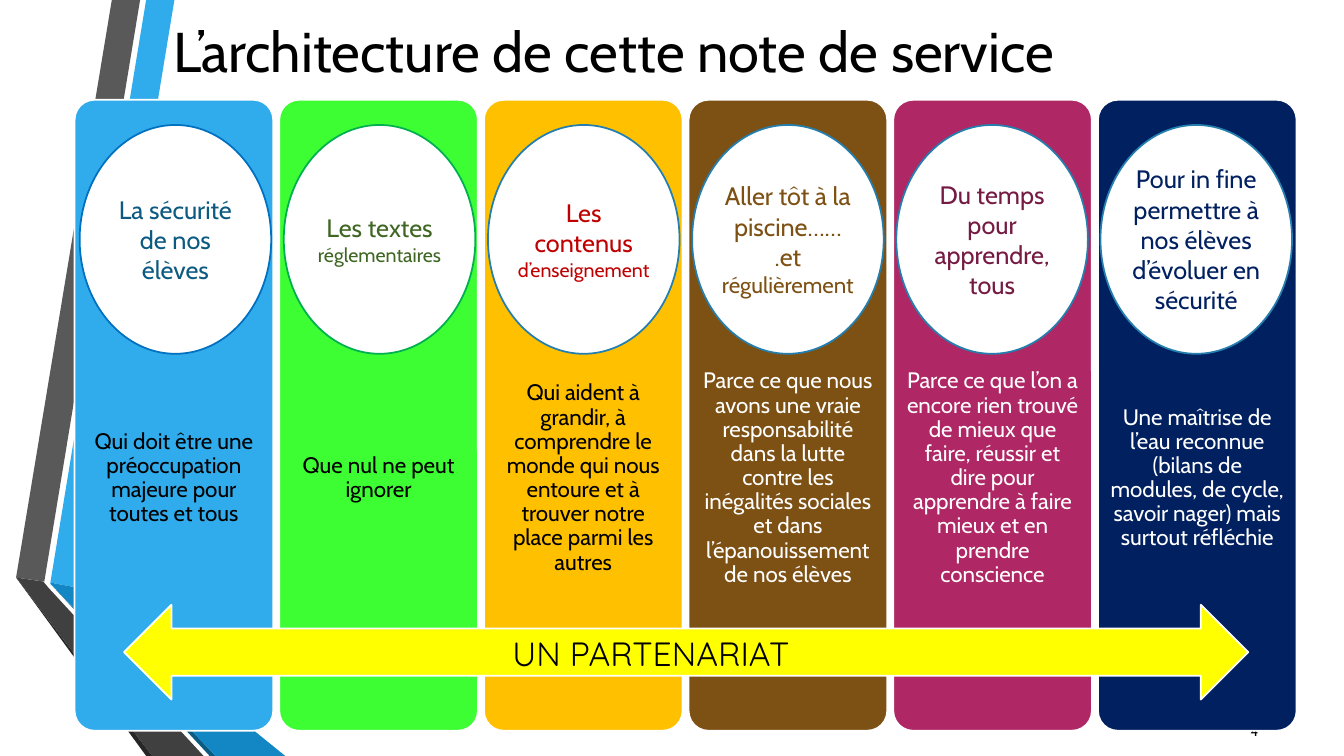
from pptx import Presentation
from pptx.dml.color import RGBColor
from pptx.enum.shapes import MSO_SHAPE
from pptx.enum.text import MSO_ANCHOR, PP_ALIGN
from pptx.util import Inches, Pt

ROUNDED = MSO_SHAPE.ROUNDED_RECTANGLE
OVAL = MSO_SHAPE.OVAL
DOUBLE_ARROW = MSO_SHAPE.LEFT_RIGHT_ARROW
TOP, MIDDLE = MSO_ANCHOR.TOP, MSO_ANCHOR.MIDDLE
LEFT, CENTER, RIGHT = PP_ALIGN.LEFT, PP_ALIGN.CENTER, PP_ALIGN.RIGHT

BLACK = RGBColor(0x00, 0x00, 0x00)
WHITE = RGBColor(0xFF, 0xFF, 0xFF)
SKY = RGBColor(0x30, 0xAC, 0xEC)
GREY = RGBColor(0x59, 0x59, 0x59)
DARK_GREY = RGBColor(0x40, 0x40, 0x40)
CHARCOAL = RGBColor(0x26, 0x26, 0x26)
BLUE = RGBColor(0x12, 0x87, 0xC3)
DEEP_BLUE = RGBColor(0x0C, 0x5A, 0x82)
LIME = RGBColor(0x3D, 0xFD, 0x33)
AMBER = RGBColor(0xFF, 0xC0, 0x00)
BROWN = RGBColor(0x7D, 0x50, 0x13)
MAGENTA = RGBColor(0xAF, 0x27, 0x64)
NAVY = RGBColor(0x00, 0x20, 0x60)
YELLOW = RGBColor(0xFF, 0xFF, 0x00)
MOSS = RGBColor(0x3F, 0x66, 0x23)
RED = RGBColor(0xC0, 0x00, 0x00)
PLUM = RGBColor(0x75, 0x1A, 0x43)
BLUE_RING = RGBColor(0x00, 0x70, 0xC0)
GREEN_RING = RGBColor(0x00, 0xB0, 0x50)
TEAL_RING = RGBColor(0x24, 0x7F, 0xAF)

FONT = "Cabin"
COLUMN_LEFT, COLUMN_PITCH, COLUMN_WIDTH = 0.74, 2.03, 1.97
OVAL_LEFT, OVAL_PITCH = 0.79, 2.025

RIBBONS = [
    (SKY, [(0.5, 5.78), (0.77, 5.83), (1.73, 0), (1.45, 0)]),
    (GREY, [(1.39, 0), (1.11, 0), (0.16, 5.73), (0.44, 5.77)]),
    (CHARCOAL, [(0.16, 5.73), (1.45, 7.5), (1.51, 7.5)]),
    (DEEP_BLUE, [(0.5, 5.79), (2.08, 7.5), (2.14, 7.5)]),
    (BLUE, [(0.5, 5.79), (2.14, 7.5), (2.83, 7.5), (0.77, 5.83), (0.5, 5.78)]),
    (DARK_GREY, [(2.02, 7.5), (0.48, 5.83), (0.43, 5.77), (0.16, 5.73), (1.51, 7.5)]),
]

COLUMNS = [
    (SKY, BLACK, "Qui doit être une préoccupation majeure pour toutes et tous"),
    (LIME, BLACK, "Que nul ne peut ignorer"),
    (AMBER, BLACK, "Qui aident à grandir, à comprendre le monde qui nous entoure "
                   "et à trouver notre place parmi les autres"),
    (BROWN, WHITE, "Parce ce que nous avons une vraie responsabilité dans la lutte contre "
                   "les inégalités sociales et dans l’épanouissement de nos élèves"),
    (MAGENTA, WHITE, "Parce ce que l’on a encore rien trouvé de mieux que faire, réussir et "
                     "dire pour apprendre à faire mieux et en prendre conscience"),
    (NAVY, WHITE, "Une maîtrise de l’eau reconnue (bilans de modules, de cycle, "
                  "savoir nager) mais surtout réfléchie"),
]

OVALS = [
    (BLUE_RING, DEEP_BLUE, 0.1, [[("La sécurité de nos élèves", 18)]]),
    (GREEN_RING, MOSS, 0, [[("Les textes ", 18), ("réglementaires", 14)]]),
    (TEAL_RING, RED, 0, [[("Les contenus ", 18), ("d’enseignement", 14)]]),
    (TEAL_RING, BROWN, 0, [[("Aller tôt à la piscine……", 18)],
                           [(".et ", 18), ("régulièrement", 16)]]),
    (TEAL_RING, PLUM, 0.1, [[("Du temps pour apprendre, tous", 18)]]),
    (TEAL_RING, NAVY, 0, [[("Pour in fine permettre à nos élèves d’évoluer en sécurité", 18)]]),
]


def add_ribbon(slide, color, points):
    corners = [(Inches(x), Inches(y)) for x, y in points]
    builder = slide.shapes.build_freeform(*corners[0])
    builder.add_line_segments(corners[1:], close=True)
    sp = builder.convert_to_shape()
    sp.shadow.inherit = False
    sp.fill.solid()
    sp.fill.fore_color.rgb = color
    sp.line.fill.background()


def add_shape(slide, kind, box, fill, line):
    sp = slide.shapes.add_shape(kind, *map(Inches, box))
    sp.shadow.inherit = False
    sp.fill.solid()
    sp.fill.fore_color.rgb = fill
    sp.line.color.rgb = line
    sp.line.width = Pt(1.25)
    return sp


def set_frame(tf, anchor, side, edge):
    tf.word_wrap = True
    tf.vertical_anchor = anchor
    tf.margin_left = tf.margin_right = Inches(side)
    tf.margin_top = tf.margin_bottom = Inches(edge)


def set_font(p, size, color, align, font=FONT):
    p.alignment = align
    p.font.name = font
    p.font.size = Pt(size)
    p.font.color.rgb = color


def add_text(slide, box, text, size, color, align, anchor=MIDDLE, font=FONT, side=0.1, edge=0.05):
    tf = slide.shapes.add_textbox(*map(Inches, box)).text_frame
    set_frame(tf, anchor, side, edge)
    p = tf.paragraphs[0]
    p.text = text
    set_font(p, size, color, align, font)
    return p


def add_column(slide, index, fill, color, text):
    left = COLUMN_LEFT + index * COLUMN_PITCH
    sp = add_shape(slide, ROUNDED, (left, 0.99, COLUMN_WIDTH, 6.26), fill, WHITE)
    sp.adjustments[0] = 0.1
    p = add_text(slide, (left, 3.49, COLUMN_WIDTH, 2.51), text, 16, color, CENTER,
                 side=0.12, edge=0.12)
    p.line_spacing = 0.9
    p.space_after = Pt(5.6)


def add_oval(slide, index, ring, color, side, paragraphs):
    left = OVAL_LEFT + index * OVAL_PITCH
    tf = add_shape(slide, OVAL, (left, 1.24, 1.9, 2.27), WHITE, ring).text_frame
    set_frame(tf, MIDDLE, side, 0.05)
    for i, runs in enumerate(paragraphs):
        p = tf.add_paragraph() if i else tf.paragraphs[0]
        set_font(p, 18, color, CENTER)
        for text, size in runs:
            r = p.add_run()
            r.text = text
            r.font.size = Pt(size)


def main():
    prs = Presentation()
    prs.slide_width, prs.slide_height = Inches(13.33), Inches(7.5)
    slide = prs.slides.add_slide(prs.slide_layouts[6])
    for color, points in RIBBONS:
        add_ribbon(slide, color, points)
    add_text(slide, (1.62, 0, 11.36, 1), "L’architecture de cette note de service", 40, BLACK, LEFT)
    add_text(slide, (11.98, 7.05, 0.6, 0.4), "4", 10, BLACK, RIGHT)
    for i, column in enumerate(COLUMNS):
        add_column(slide, i, *column)
    add_shape(slide, DOUBLE_ARROW, (1.23, 6, 11.15, 0.94), YELLOW, WHITE)
    for i, oval in enumerate(OVALS):
        add_oval(slide, i, *oval)
    add_text(slide, (2.12, 6.23, 8.67, 0.5), "UN PARTENARIAT", 24, BLACK, CENTER, TOP, "Quicksand")
    prs.save("out.pptx")


if __name__ == "__main__":
    main()
